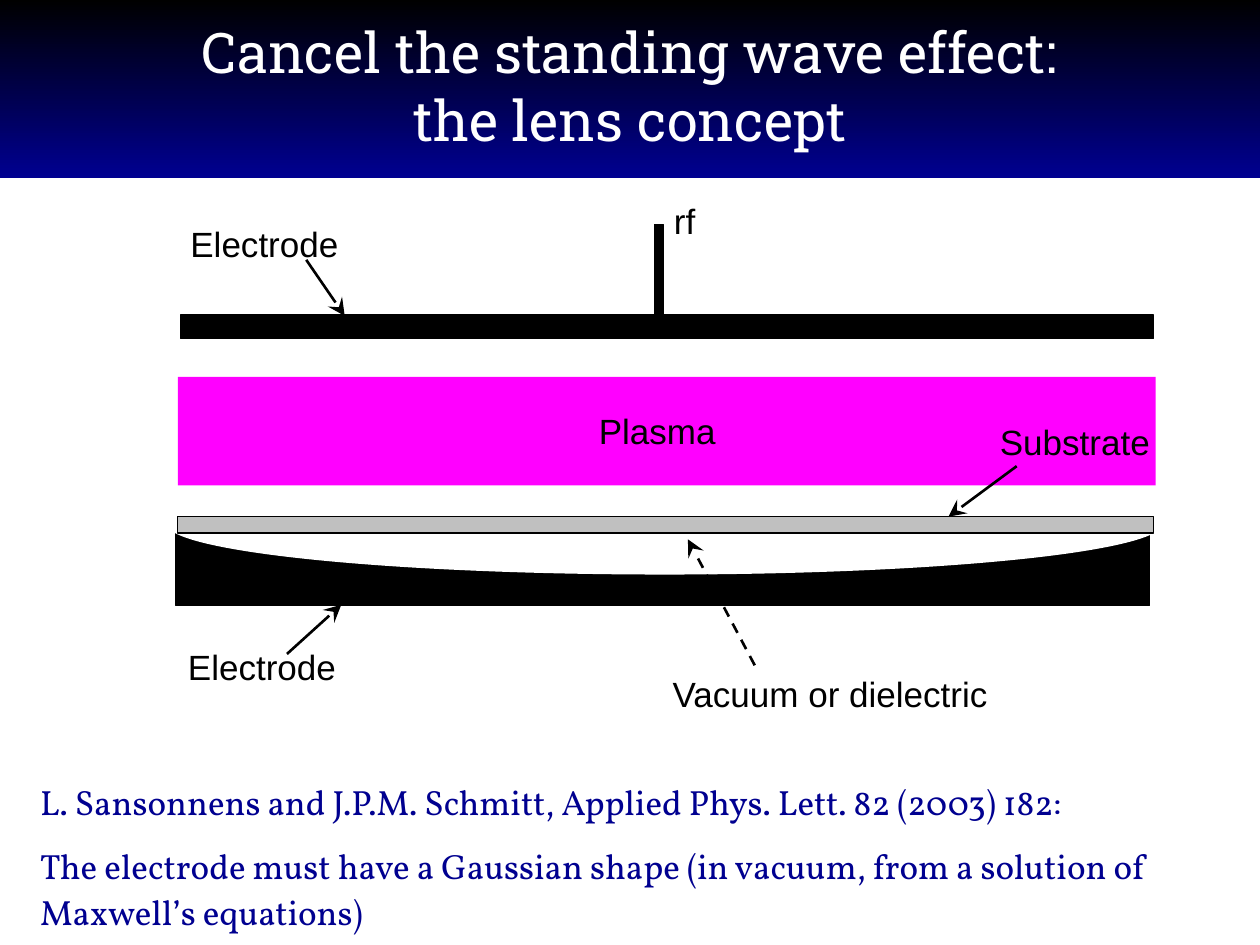
from copy import deepcopy
from dataclasses import dataclass
from typing import NamedTuple, Optional

from lxml.etree import SubElement
from pptx import Presentation
from pptx.dml.color import RGBColor
from pptx.enum.dml import MSO_LINE
from pptx.enum.shapes import MSO_CONNECTOR, MSO_SHAPE
from pptx.enum.text import MSO_ANCHOR, MSO_AUTO_SIZE, PP_ALIGN
from pptx.oxml.ns import qn
from pptx.util import Pt


@dataclass(frozen=True)
class Theme:
    black: RGBColor = RGBColor(0, 0, 0)
    white: RGBColor = RGBColor(255, 255, 255)
    navy: RGBColor = RGBColor(0, 0, 0x90)
    plasma: RGBColor = RGBColor(255, 0, 255)
    glass: RGBColor = RGBColor(0xC0, 0xC0, 0xC0)
    title_font: str = "Roboto Slab"
    body_font: str = "Vollkorn"
    label_font: str = "Arial"
    title_size: float = 32
    text_size: float = 20
    outline: float = 0.75
    arrow: float = 1.5


class Box(NamedTuple):
    left: float
    top: float
    width: float
    height: float


class Part(NamedTuple):
    box: Box
    fill: RGBColor
    outlined: bool = True
    kind: MSO_SHAPE = MSO_SHAPE.RECTANGLE


class Label(NamedTuple):
    text: str
    box: Box


class Arrow(NamedTuple):
    x1: float
    y1: float
    x2: float
    y2: float
    dashed: bool = False


THEME = Theme()
LABEL_H = 31

TITLE_BAND = Part(Box(0, 0, 720, 101.5), THEME.navy, False)
LOWER_ELECTRODE = Part(Box(100.5, 298, 556.4, 48.2), THEME.black)
LENS = Part(Box(95, 270, 569.5, 58.3), THEME.white, False, MSO_SHAPE.OVAL)
PLASMA = Part(Box(101.7, 215.4, 558.7, 62), THEME.plasma, False)
UPPER_ELECTRODE = Part(Box(103, 180, 556.2, 13.4), THEME.black)
SUBSTRATE = Part(Box(101.5, 295.2, 557.6, 9.4), THEME.glass)
FEED = Part(Box(374.1, 128.2, 5, 54.7), THEME.black)
REACTOR = [LOWER_ELECTRODE, LENS, PLASMA, UPPER_ELECTRODE, SUBSTRATE, FEED]

LABELS = [
    Label("Electrode", Box(101.7, 123.8, 99.4, LABEL_H)),
    Label("Electrode", Box(100.3, 365.4, 99.4, LABEL_H)),
    Label("Substrate", Box(564.3, 236.5, 100, LABEL_H)),
    Label("Vacuum or dielectric", Box(377.3, 380.5, 195.8, LABEL_H)),
    Label("Plasma", Box(335.1, 230.4, 81.4, LABEL_H)),
    Label("rf", Box(378, 110.2, 26.6, LABEL_H)),
]
ARROWS = [
    Arrow(175, 148.5, 197, 180.5),
    Arrow(164, 373.7, 195, 345.6),
    Arrow(581, 266.4, 542, 295.2),
    Arrow(431.3, 380.2, 393.1, 308.2, dashed=True),
]
CITATION = [
    "L. Sansonnens and J.P.M. Schmitt, Applied Phys. Lett. 82 (2003) 182:",
    "The electrode must have a Gaussian shape (in vacuum, from a solution of "
    "Maxwell’s equations)",
]


def in_points(box: Box) -> list:
    return [Pt(v) for v in box]


def write(tf, paragraphs: list, *, font: str, size: float, color: RGBColor,
          align: PP_ALIGN = PP_ALIGN.LEFT, wrap: bool = True,
          anchor: MSO_ANCHOR = MSO_ANCHOR.TOP, gap: float = 0,
          spacing: Optional[float] = None) -> None:
    """Fill a text frame; gap is the space between its paragraphs."""
    tf.word_wrap = wrap
    tf.vertical_anchor = anchor
    for i, text in enumerate(paragraphs):
        p = tf.paragraphs[0] if i == 0 else tf.add_paragraph()
        p.text = text
        p.alignment = align
        if spacing:
            p.line_spacing = spacing
        if i and gap:
            p.space_before = Pt(gap)
        for r in p.runs:
            r.font.name = font
            r.font.size = Pt(size)
            r.font.color.rgb = color


def add_title(s, text: str) -> None:
    sp = s.shapes.title
    sp.left, sp.top, sp.width, sp.height = in_points(Box(36, 3.6, 648, 90))
    write(sp.text_frame, [text], font=THEME.title_font, size=THEME.title_size,
          color=THEME.white, align=PP_ALIGN.CENTER, anchor=MSO_ANCHOR.MIDDLE)
    sp.text_frame.auto_size = MSO_AUTO_SIZE.NONE
    run_format = next(sp.element.iter(qn("a:rPr")))
    for br in sp.element.iter(qn("a:br")):
        br.append(deepcopy(run_format))


def add_part(s, part: Part):
    sp = s.shapes.add_shape(part.kind, *in_points(part.box))
    sp.shadow.inherit = False
    sp.fill.solid()
    sp.fill.fore_color.rgb = part.fill
    if part.outlined:
        sp.line.color.rgb = THEME.black
        sp.line.width = Pt(THEME.outline)
    else:
        sp.line.fill.background()
    return sp


def add_title_band(s) -> None:
    """Draw the gradient band and put it behind the title."""
    sp = add_part(s, TITLE_BAND)
    sp.fill.gradient()
    sp.fill.gradient_angle = 270
    for stop, color in zip(sp.fill.gradient_stops, (THEME.black, THEME.navy)):
        stop.color.rgb = color
    s.shapes.title.element.addprevious(sp.element)


def add_label(s, label: Label) -> None:
    tf = s.shapes.add_textbox(*in_points(label.box)).text_frame
    write(tf, [label.text], font=THEME.label_font, size=THEME.text_size,
          color=THEME.black, wrap=False)
    tf.auto_size = MSO_AUTO_SIZE.SHAPE_TO_FIT_TEXT


def add_arrow(s, arrow: Arrow) -> None:
    ends = [Pt(v) for v in arrow[:4]]
    cxn = s.shapes.add_connector(MSO_CONNECTOR.STRAIGHT, *ends)
    cxn.line.color.rgb = THEME.black
    cxn.line.width = Pt(THEME.arrow)
    if arrow.dashed:
        cxn.line.dash_style = MSO_LINE.DASH
    sp_pr = cxn.element.spPr
    SubElement(sp_pr.find(qn("a:ln")), qn("a:tailEnd"),
               type="stealth", w="lg", len="lg")
    SubElement(sp_pr, qn("a:effectLst"))


def add_citation(s) -> None:
    tf = s.shapes.add_textbox(*in_points(Box(15.8, 440, 684.7, 99.4))).text_frame
    write(tf, CITATION, font=THEME.body_font, size=THEME.text_size,
          color=THEME.navy, gap=10, spacing=1.1)
    tf.auto_size = MSO_AUTO_SIZE.SHAPE_TO_FIT_TEXT


def main() -> None:
    prs = Presentation()
    prs.slide_width, prs.slide_height = Pt(720), Pt(540)
    s = prs.slides.add_slide(prs.slide_layouts[5])
    add_title(s, "Cancel the standing wave effect:\vthe lens concept")
    add_title_band(s)
    add_citation(s)
    for part in REACTOR:
        add_part(s, part)
    for label in LABELS:
        add_label(s, label)
    for arrow in ARROWS:
        add_arrow(s, arrow)
    prs.save("out.pptx")


if __name__ == "__main__":
    main()
